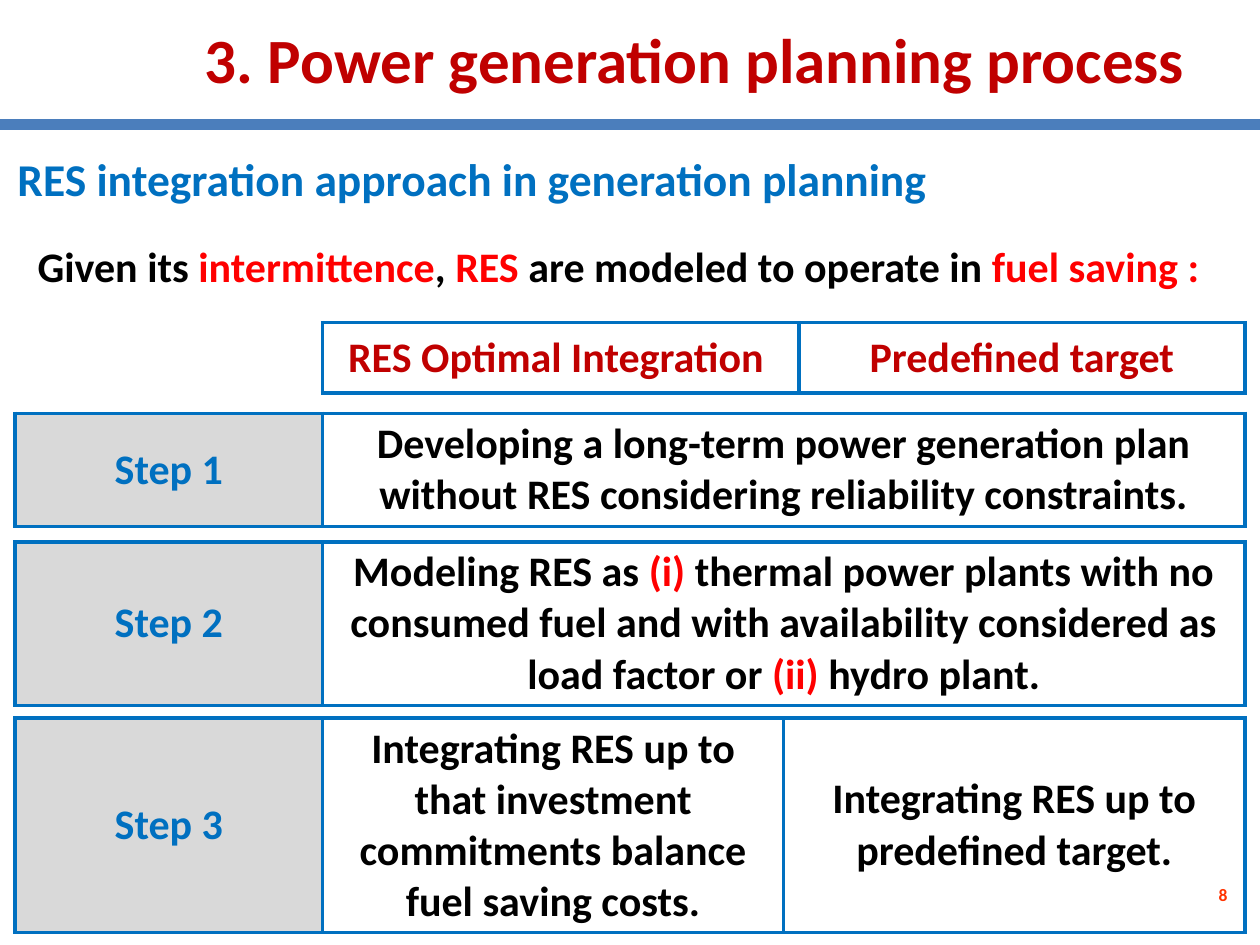
from lxml.etree import SubElement
from pptx import Presentation
from pptx.dml.color import RGBColor
from pptx.enum.shapes import MSO_CONNECTOR
from pptx.enum.text import MSO_ANCHOR, PP_ALIGN
from pptx.oxml import parse_xml
from pptx.oxml.ns import nsdecls, qn
from pptx.util import Inches, Pt

COLORS = {
    "title": "C00000", "accent": "0070C0", "text": "000000", "highlight": "FF0000",
    "step": "D9D9D9", "rule": "4B7EBC", "number": "FF3300",
}
TABLE_LEFT, STEP_WIDTH, BODY_WIDTH = 0.12, 2.44, 7.32


class SlideBuilder:
    font = "Calibri"
    border = Pt(2.25)

    def __init__(self, deck):
        self.page = deck.slides.add_slide(deck.slide_layouts[5])

    def fill_text(self, frame, content, size, color, align=PP_ALIGN.LEFT):
        """Fill a frame with a string, or with (text, colour) spans."""
        frame.word_wrap = True
        para = frame.paragraphs[0]
        para.alignment = align
        para.font.name = self.font
        para.font.size = Pt(size)
        para.font.bold = True
        if isinstance(content, str):
            para.font.color.rgb = RGBColor.from_string(COLORS[color])
            para.add_run().text = content
            return
        for text, span_color in content:
            span = para.add_run()
            span.text = text
            span.font.color.rgb = RGBColor.from_string(COLORS[span_color])

    def title(self, text, left, top, width, height):
        box = self.page.shapes.title
        box.left, box.top = Inches(left), Inches(top)
        box.width, box.height = Inches(width), Inches(height)
        box.text_frame.vertical_anchor = MSO_ANCHOR.MIDDLE
        self.fill_text(box.text_frame, text, 36, "title", PP_ALIGN.CENTER)

    def text(self, content, left, top, width, height, size, color="text",
             align=PP_ALIGN.LEFT, anchor=MSO_ANCHOR.TOP):
        box = self.page.shapes.add_textbox(
            Inches(left), Inches(top), Inches(width), Inches(height))
        box.text_frame.vertical_anchor = anchor
        self.fill_text(box.text_frame, content, size, color, align)

    def rule(self, top, width):
        line = self.page.shapes.add_connector(
            MSO_CONNECTOR.STRAIGHT, 0, Inches(top), Inches(width), Inches(top))
        line.line.color.rgb = RGBColor.from_string(COLORS["rule"])
        line.line.width = Pt(6)
        SubElement(line._element.spPr, qn("a:effectLst"))

    def cell_borders(self, cell, sides):
        """Draw the given sides (letters of LRTB) and clear the others."""
        properties = cell._tc.get_or_add_tcPr()
        for index, side in enumerate("LRTB"):
            paint = (f'<a:solidFill><a:srgbClr val="{COLORS["accent"]}"/></a:solidFill>'
                     if side in sides else "<a:noFill/>")
            properties.insert(index, parse_xml(
                f'<a:ln{side} {nsdecls("a")} w="{self.border}">{paint}</a:ln{side}>'))

    def table_row(self, top, height, label, widths, contents, color="text"):
        """Add a one-row table whose first cell is a step label, or open if empty."""
        widths = [STEP_WIDTH, *widths]
        table = self.page.shapes.add_table(
            1, len(widths), Inches(TABLE_LEFT), Inches(top),
            Inches(sum(widths)), Inches(height)).table
        table.first_row = table.horz_banding = False
        table.rows[0].height = Inches(height)
        for index, (width, content) in enumerate(zip(widths, [label, *contents])):
            table.columns[index].width = Inches(width)
            cell = table.cell(0, index)
            cell.vertical_anchor = MSO_ANCHOR.MIDDLE
            cell.margin_top = cell.margin_bottom = Inches(0.04)
            if index == 0 and label:
                cell.fill.solid()
                cell.fill.fore_color.rgb = RGBColor.from_string(COLORS["step"])
            else:
                cell.fill.background()
            self.cell_borders(cell, "LRTB" if content else "R")
            if content:
                self.fill_text(cell.text_frame, content, 24,
                               color if index else "accent", PP_ALIGN.CENTER)


def main():
    deck = Presentation()
    deck.slide_width, deck.slide_height = Inches(10), Inches(7.5)
    slide = SlideBuilder(deck)

    slide.text("8", 6.67, 6.9, 3.17, 0.4, 10, "number", PP_ALIGN.RIGHT, MSO_ANCHOR.MIDDLE)
    slide.rule(0.99, 10)
    slide.title("3. Power generation planning process", 1.3, 0, 8.43, 0.92)
    slide.text("RES integration approach in generation planning",
               0.04, 1.15, 9.9, 0.54, 26, "accent")
    slide.text([("Given its ", "text"), ("intermittence", "highlight"), (",", "text"),
                (" RES ", "highlight"), ("are modeled to operate in ", "text"),
                ("fuel saving :", "highlight")], 0.2, 1.86, 9.53, 0.5, 24)

    slide.table_row(2.56, 0.56, "", [3.78, 3.54],
                    ["RES Optimal Integration ", "Predefined target"], "title")
    slide.table_row(3.28, 0.9, "Step 1", [BODY_WIDTH], [
        "Developing a long-term power generation plan without RES "
        "considering reliability constraints."])
    slide.table_row(4.3, 1.3, "Step 2", [BODY_WIDTH], [[
        ("Modeling RES as ", "text"), ("(i)", "highlight"),
        (" thermal power plants with no consumed fuel and with availability "
         "considered as load factor or ", "text"),
        ("(ii) ", "highlight"), ("hydro plant.", "text")]])
    slide.table_row(5.7, 1.7, "Step 3", [BODY_WIDTH / 2] * 2, [
        "Integrating RES up to that investment commitments balance fuel saving costs.",
        "Integrating RES up to predefined target."])

    deck.save("out.pptx")


if __name__ == "__main__":
    main()
